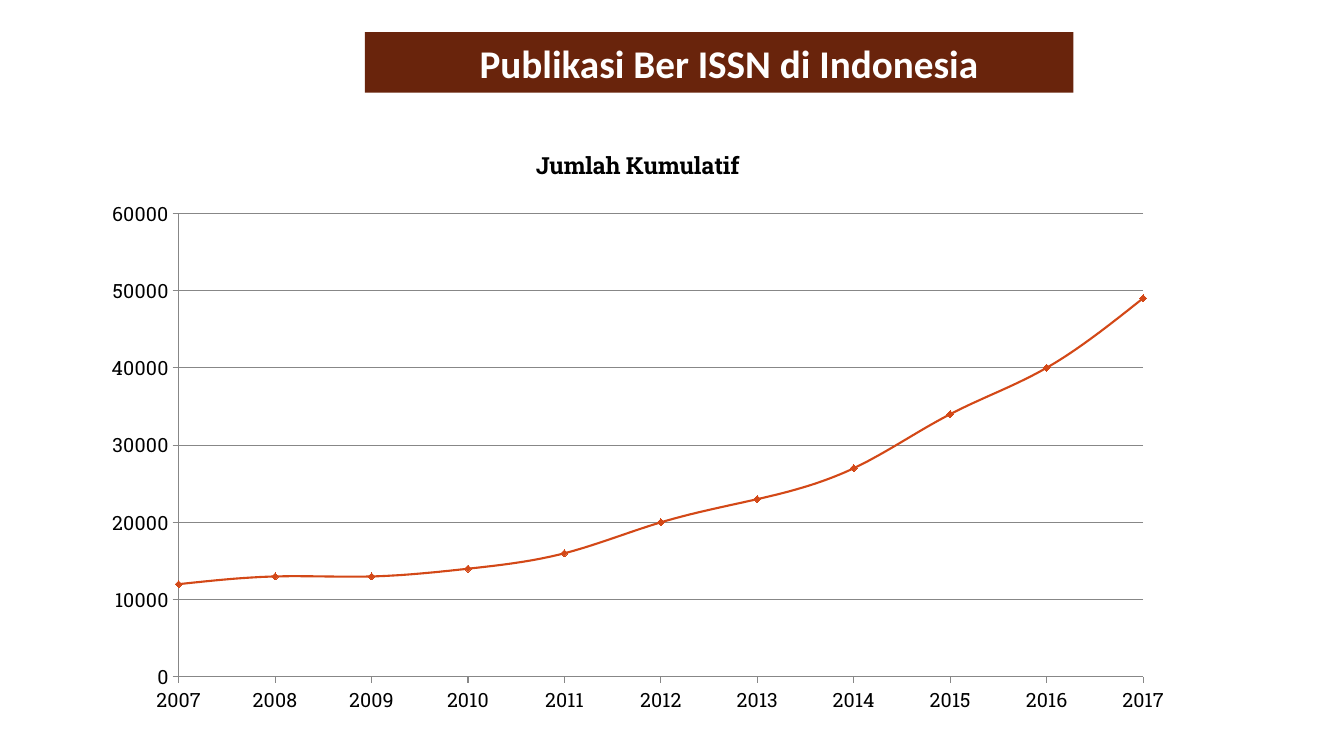
from dataclasses import dataclass

from pptx import Presentation
from pptx.chart.axis import ValueAxis
from pptx.chart.chart import Chart
from pptx.chart.data import XyChartData
from pptx.dml.color import RGBColor
from pptx.enum.chart import XL_AXIS_CROSSES, XL_CHART_TYPE, XL_MARKER_STYLE, XL_TICK_MARK
from pptx.enum.shapes import MSO_SHAPE
from pptx.enum.text import MSO_ANCHOR, PP_ALIGN
from pptx.oxml import parse_xml
from pptx.oxml.ns import nsdecls, qn
from pptx.slide import Slide
from pptx.text.text import TextFrame
from pptx.util import Pt

COLORS = {
    "banner": "69240C",
    "series": "D34817",
    "axis": "878787",
    "dark": "000000",
    "light": "FFFFFF",
}
SERIES_NAME = "Jumlah Kumulatif"
FIRST_YEAR = 2007
TOTALS = [12000, 13000, 13000, 14000, 16000, 20000, 23000, 27000, 34000, 40000, 49000]


@dataclass(frozen=True)
class Frame:
    left: float
    top: float
    width: float
    height: float

    def lengths(self) -> tuple[Pt, Pt, Pt, Pt]:
        return Pt(self.left), Pt(self.top), Pt(self.width), Pt(self.height)


@dataclass(frozen=True)
class AxisScale:
    minimum: int
    maximum: int
    step: int
    gridlines: bool


BANNER = Frame(260.6, 23, 506.2, 43.2)
CHART = Frame(64, 90, 782.6, 427.7)
PLOT = Frame(127.6, 152.3, 689, 331.3)
YEARS = AxisScale(FIRST_YEAR, FIRST_YEAR + len(TOTALS) - 1, 1, False)
COUNTS = AxisScale(0, 60000, 10000, True)


def color(name: str) -> RGBColor:
    return RGBColor.from_string(COLORS[name])


def write(frame: TextFrame, text: str, *, size: float, font: str, ink: str) -> None:
    """Put one bold, centred line of text in the frame."""
    para = frame.paragraphs[0]
    para.alignment = PP_ALIGN.CENTER
    span = para.add_run()
    span.text = text
    span.font.size = Pt(size)
    span.font.name = font
    span.font.bold = True
    span.font.color.rgb = color(ink)


def add_banner(page: Slide, frame: Frame, text: str) -> None:
    box = page.shapes.add_shape(MSO_SHAPE.RECTANGLE, *frame.lengths())
    box.shadow.inherit = False
    box.fill.solid()
    box.fill.fore_color.rgb = color("banner")
    box.line.fill.background()
    box.text_frame.word_wrap = True
    box.text_frame.vertical_anchor = MSO_ANCHOR.MIDDLE
    box.text_frame.margin_left = Pt(21)
    write(box.text_frame, text, size=28, font="Calibri", ink="light")


def style_axis(axis: ValueAxis, scale: AxisScale) -> None:
    axis.minimum_scale = scale.minimum
    axis.maximum_scale = scale.maximum
    axis.major_unit = scale.step
    axis.major_tick_mark = XL_TICK_MARK.OUTSIDE
    axis.minor_tick_mark = XL_TICK_MARK.NONE
    axis.crosses = XL_AXIS_CROSSES.MINIMUM
    axis.tick_labels.number_format = "0"
    axis.tick_labels.number_format_is_linked = False
    axis.has_major_gridlines = scale.gridlines
    lines = [axis.format.line]
    if scale.gridlines:
        lines.append(axis.major_gridlines.format.line)
    for line in lines:
        line.color.rgb = color("axis")
        line.width = Pt(0.75)


def style_series(chart: Chart) -> None:
    plot = chart.plots[0]
    plot.vary_by_categories = False
    series = plot.series[0]
    series.format.line.color.rgb = color("series")
    series.format.line.width = Pt(1.5)
    series.marker.style = XL_MARKER_STYLE.DIAMOND
    series.marker.size = 5
    series.marker.format.fill.solid()
    series.marker.format.fill.fore_color.rgb = color("series")
    series.marker.format.line.color.rgb = color("series")
    for smooth in series._element.findall(qn("c:smooth")):
        smooth.set("val", "1")


def place_plot_area(chart: Chart, outer: Frame, inner: Frame) -> None:
    """Fix the inner plot area, given as fractions of the chart's frame."""
    area = chart._chartSpace.chart.plotArea
    for layout in area.findall(qn("c:layout")):
        area.remove(layout)
    shares = {
        "x": (inner.left - outer.left) / outer.width,
        "y": (inner.top - outer.top) / outer.height,
        "w": inner.width / outer.width,
        "h": inner.height / outer.height,
    }
    modes = "".join(f'<c:{side}Mode val="edge"/>' for side in "xy")
    sizes = "".join(f'<c:{side} val="{share}"/>' for side, share in shares.items())
    area.insert(0, parse_xml(
        f'<c:layout {nsdecls("c")}><c:manualLayout><c:layoutTarget val="inner"/>'
        f"{modes}{sizes}</c:manualLayout></c:layout>"
    ))


def add_growth_chart(page: Slide, frame: Frame, plot_frame: Frame) -> None:
    data = XyChartData()
    points = data.add_series(SERIES_NAME)
    for year, total in enumerate(TOTALS, start=FIRST_YEAR):
        points.add_data_point(year, total)
    chart = page.shapes.add_chart(
        XL_CHART_TYPE.XY_SCATTER_SMOOTH, *frame.lengths(), data
    ).chart
    chart.font.size = Pt(14)
    chart.font.name = "Roboto Slab"
    chart.font.color.rgb = color("dark")
    chart.has_legend = False
    chart.has_title = True
    chart.chart_title.include_in_layout = False
    write(chart.chart_title.text_frame, SERIES_NAME, size=16.8, font="Roboto Slab", ink="dark")
    style_axis(chart.category_axis, YEARS)
    style_axis(chart.value_axis, COUNTS)
    style_series(chart)
    place_plot_area(chart, frame, plot_frame)


def main() -> None:
    deck = Presentation()
    deck.slide_width, deck.slide_height = Pt(960), Pt(540)
    page = deck.slides.add_slide(deck.slide_layouts[6])
    add_banner(page, BANNER, "Publikasi Ber ISSN di Indonesia")
    add_growth_chart(page, CHART, PLOT)
    deck.save("out.pptx")


if __name__ == "__main__":
    main()
